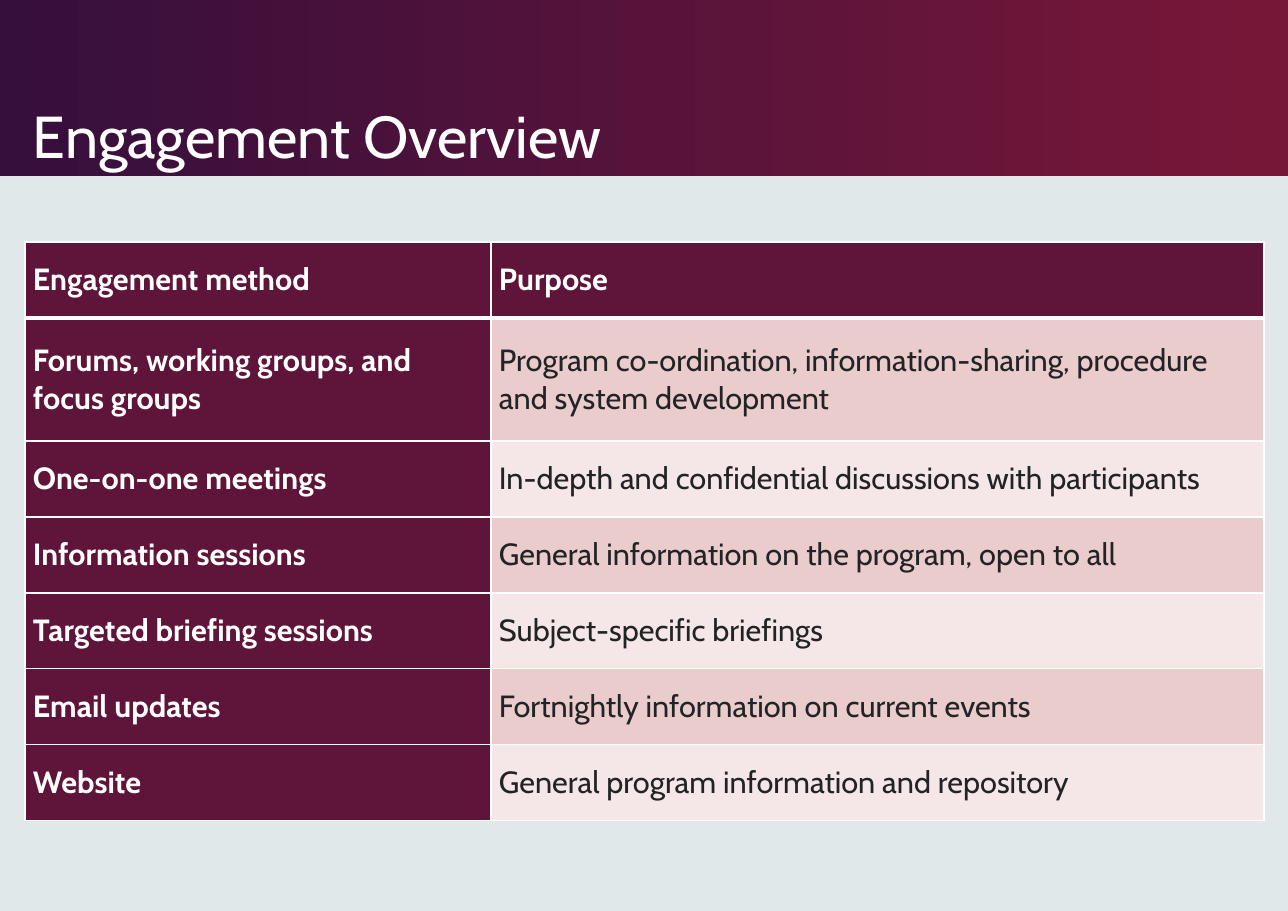
from lxml.etree import SubElement
from pptx import Presentation
from pptx.dml.color import RGBColor
from pptx.enum.shapes import MSO_SHAPE
from pptx.enum.text import MSO_ANCHOR, MSO_AUTO_SIZE, PP_ALIGN
from pptx.oxml.ns import qn
from pptx.util import Pt

PX = 8298
WHITE = RGBColor(0xFF, 0xFF, 0xFF)
INK = RGBColor(0x22, 0x23, 0x24)
PLUM = RGBColor(0x5F, 0x14, 0x39)
VIOLET = RGBColor(0x36, 0x0F, 0x3C)
CRIMSON = RGBColor(0x77, 0x17, 0x38)
ROSE = RGBColor(0xEA, 0xCC, 0xCD)
BLUSH = RGBColor(0xF5, 0xE7, 0xE8)
MIST = RGBColor(0xE0, 0xE8, 0xEA)

WIDTH, HEIGHT = 1288, 911
BANNER_HEIGHT = 176
COLUMN_WIDTHS = [466, 773]
ROW_HEIGHTS = [76, 123, 76, 76, 76, 76, 76]
ROWS = [
    ("Engagement method", "Purpose"),
    ("Forums, working groups, and focus groups",
     "Program co-ordination, information-sharing, procedure and system development"),
    ("One-on-one meetings", "In-depth and confidential discussions with participants"),
    ("Information sessions", "General information on the program, open to all"),
    ("Targeted briefing sessions", "Subject-specific briefings"),
    ("Email updates", "Fortnightly information on current events"),
    ("Website", "General program information and repository"),
]
MARGINS = {"margin_left": 8 * PX, "margin_right": 8 * PX,
           "margin_top": 4 * PX, "margin_bottom": 4 * PX}


def apply(target, values):
    for name, value in values.items():
        setattr(target, name, value)


def add_border(cell, side, points):
    line = SubElement(cell._tc.get_or_add_tcPr(), qn(f"a:{side}"), w=str(Pt(points)))
    fill = SubElement(line, qn("a:solidFill"))
    SubElement(fill, qn("a:srgbClr"), val=str(WHITE))


presentation = Presentation()
apply(presentation, {"slide_width": WIDTH * PX, "slide_height": HEIGHT * PX})
slide = presentation.slides.add_slide(presentation.slide_layouts[5])
slide.background.fill.solid()
slide.background.fill.fore_color.rgb = MIST

banner = slide.shapes.add_shape(MSO_SHAPE.RECTANGLE, 0, 0, WIDTH * PX, BANNER_HEIGHT * PX)
banner.shadow.inherit = False
banner.line.fill.background()
banner.fill.gradient()
banner.fill.gradient_angle = 0
for stop, color, position in zip(banner.fill.gradient_stops, (VIOLET, CRIMSON), (0, 0.99)):
    stop.color.rgb = color
    stop.position = position

title = slide.shapes.title
banner.element.addnext(title.element)
apply(title, {"left": 25 * PX, "top": 18 * PX, "width": 951 * PX, "height": 157 * PX})
apply(title.text_frame, {"text": "Engagement Overview", "word_wrap": True,
                         "auto_size": MSO_AUTO_SIZE.NONE,
                         "vertical_anchor": MSO_ANCHOR.BOTTOM, **MARGINS})
paragraph = title.text_frame.paragraphs[0]
apply(paragraph, {"alignment": PP_ALIGN.LEFT, "line_spacing": 0.9})
apply(paragraph.runs[0].font, {"name": "Cabin", "size": Pt(38.6)})
paragraph.runs[0].font.color.rgb = WHITE

table = slide.shapes.add_table(len(ROWS), len(COLUMN_WIDTHS), 25 * PX, 242 * PX,
                               sum(COLUMN_WIDTHS) * PX, sum(ROW_HEIGHTS) * PX).table
for column, width in zip(table.columns, COLUMN_WIDTHS):
    column.width = width * PX
for row, height in zip(table.rows, ROW_HEIGHTS):
    row.height = height * PX

for row_index, texts in enumerate(ROWS):
    for column_index, text in enumerate(texts):
        heading = row_index == 0 or column_index == 0
        cell = table.cell(row_index, column_index)
        apply(cell, {"text": text, "vertical_anchor": MSO_ANCHOR.MIDDLE, **MARGINS})
        paragraph = cell.text_frame.paragraphs[0]
        apply(paragraph, {"space_before": Pt(2), "space_after": Pt(1 if row_index else 0)})
        font = paragraph.runs[0].font
        apply(font, {"name": "Cabin", "size": Pt(20), "bold": heading})
        font.color.rgb = WHITE if heading else INK
        for side in ("lnL", "lnR", "lnT", "lnB"):
            header_edge = (row_index, side) in ((0, "lnB"), (1, "lnT"))
            add_border(cell, side, 3 if header_edge else 1)
        cell.fill.solid()
        cell.fill.fore_color.rgb = PLUM if heading else ROSE if row_index % 2 else BLUSH

presentation.save("out.pptx")
